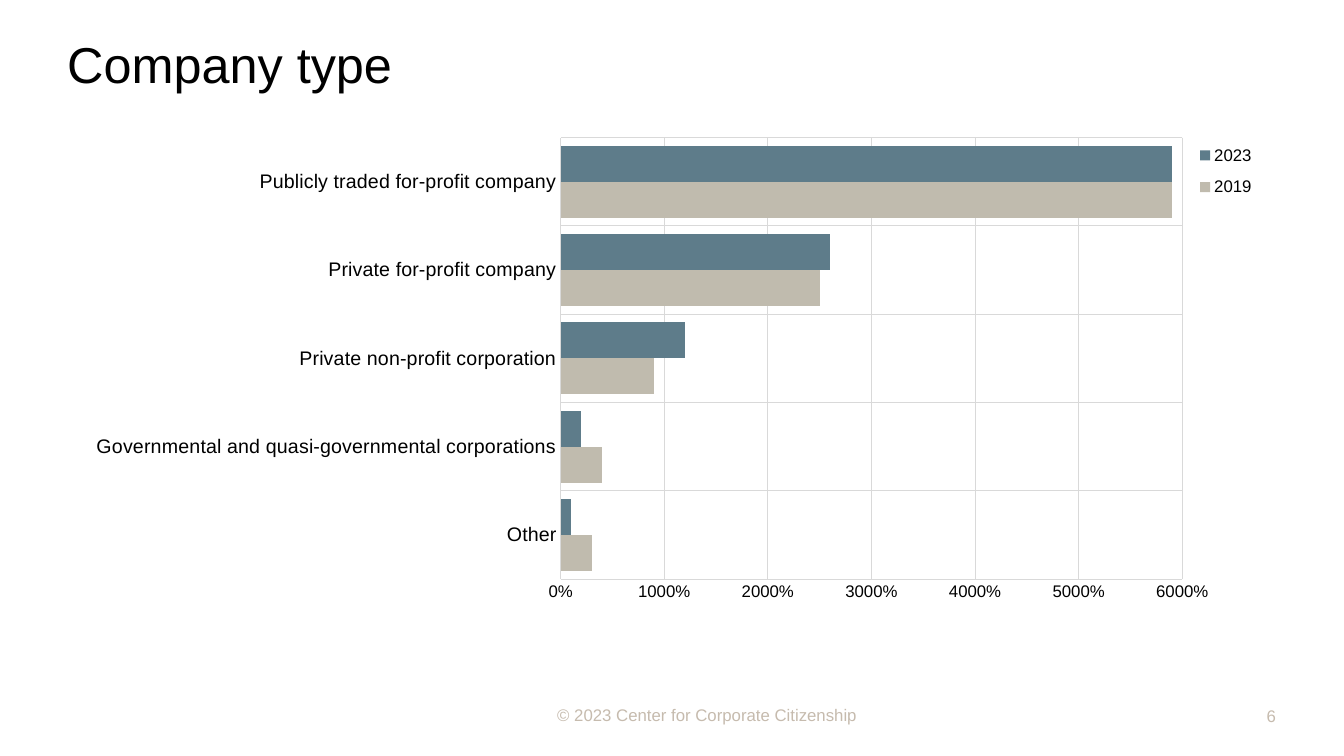
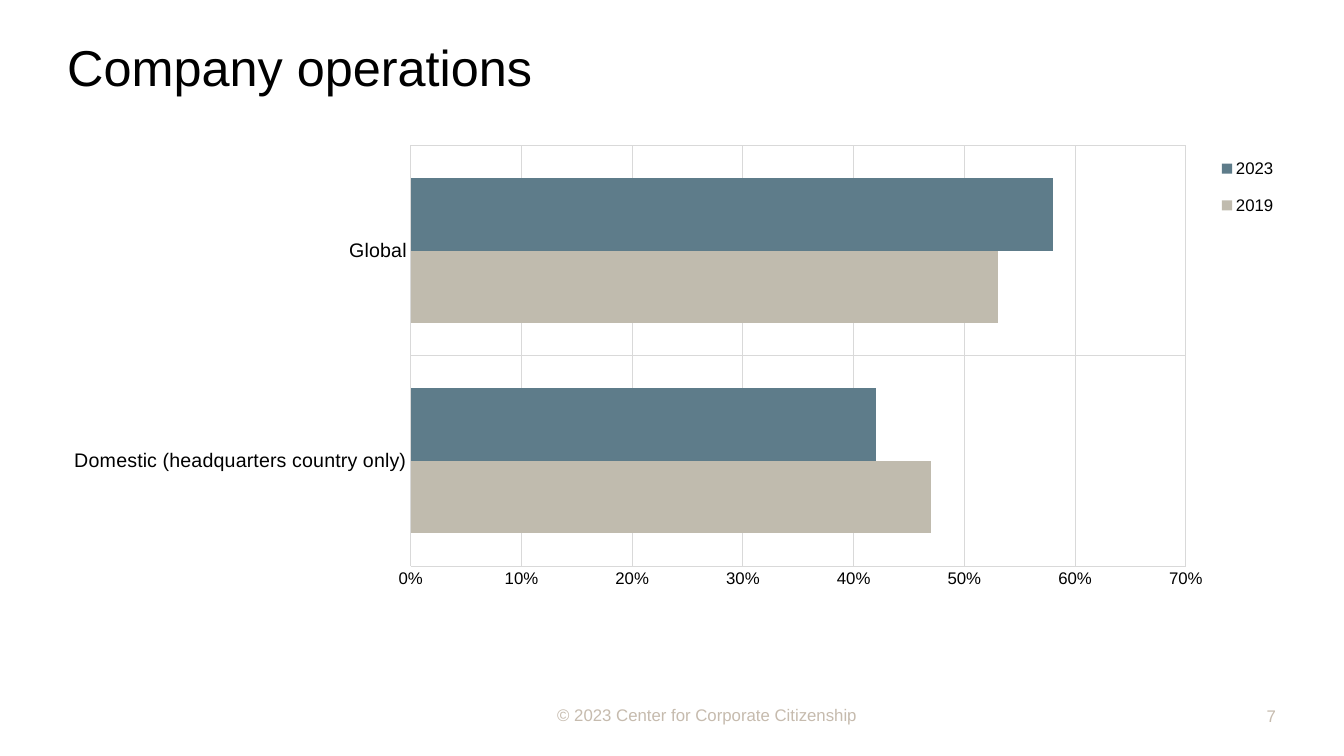
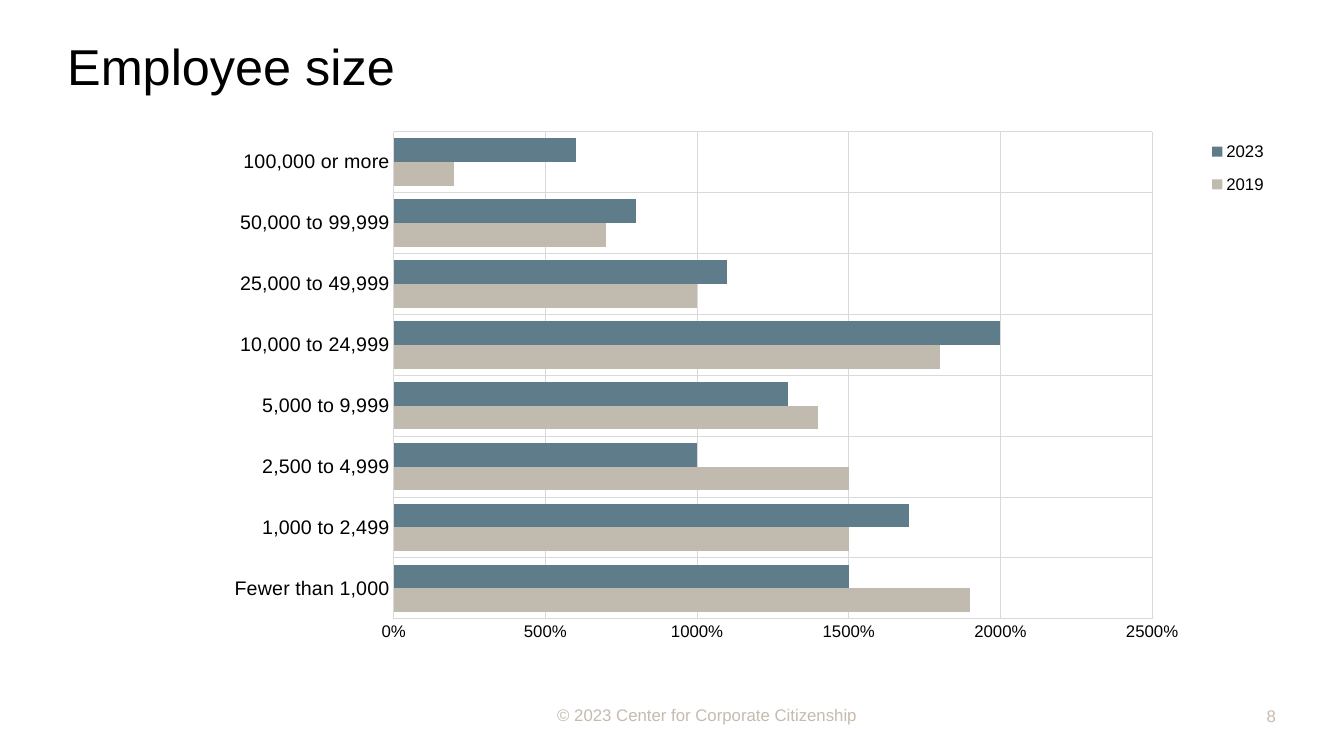
from lxml.etree import SubElement
from pptx import Presentation
from pptx.chart.data import CategoryChartData
from pptx.dml.color import RGBColor
from pptx.enum.chart import XL_CHART_TYPE, XL_LEGEND_POSITION, XL_TICK_MARK
from pptx.enum.text import MSO_ANCHOR, MSO_AUTO_SIZE, PP_ALIGN
from pptx.oxml import parse_xml
from pptx.oxml.ns import nsdecls, qn
from pptx.util import Pt

COLORS = {
    "background": "FFFFFF",
    "text": "000000",
    "footer": "C6BBAE",
    "grid": "D9D9D9",
    "2019": "C0BBAE",
    "2023": "5E7C8A",
}
FONT = "Arial"
MARGIN = 48
FOOTER = "© 2023 Center for Corporate Citizenship"
FRAME_FORMAT = {
    "margin_left": 0, "margin_top": 0, "margin_right": 0, "margin_bottom": 0,
    "word_wrap": True, "auto_size": MSO_AUTO_SIZE.NONE,
    "vertical_anchor": MSO_ANCHOR.MIDDLE,
}

# Areas are (left, top, width, height); plot and legend are fractions of the chart.
PAGES = [
    {
        "title": "Company type", "number": 6,
        "title_area": (MARGIN, 11.5, 912, 68),
        "chart_area": (MARGIN, 77, 864, 388),
        "plot": (0.408, 0.055, 0.514, 0.813),
        "legend": (0.932, 0.046, 0.052, 0.142),
        "gap": 45, "maximum": 60, "step": 10,
        "rows": [
            ("Other", 3, 1),
            ("Governmental and quasi-governmental corporations", 4, 2),
            ("Private non-profit corporation", 9, 12),
            ("Private for-profit company", 25, 26),
            ("Publicly traded for-profit company", 59, 59),
        ],
    },
    {
        "title": "Company operations", "number": 7,
        "title_area": (MARGIN, 13.5, 912, 68),
        "chart_area": (MARGIN, 87, 883, 366.5),
        "plot": (0.278, 0.046, 0.627, 0.82),
        "legend": (0.929, 0.037, 0.052, 0.18),
        "gap": 90, "maximum": 0.7, "step": 0.1,
        "rows": [
            ("Domestic (headquarters country only)", 0.47, 0.42),
            ("Global", 0.53, 0.58),
        ],
    },
    {
        "title": "Employee size", "number": 8,
        "title_area": (MARGIN, 13.5, 900, 67),
        "chart_area": (MARGIN, 87, 864, 395),
        "plot": (0.27, 0.018, 0.627, 0.881),
        "legend": (0.942, 0.011, 0.052, 0.145),
        "gap": 57, "maximum": 25, "step": 5,
        "rows": [
            ("Fewer than 1,000", 19, 15),
            ("1,000 to 2,499", 15, 17),
            ("2,500 to 4,999", 15, 10),
            ("5,000 to 9,999", 14, 13),
            ("10,000 to 24,999", 18, 20),
            ("25,000 to 49,999", 10, 11),
            ("50,000 to 99,999", 7, 8),
            ("100,000 or more", 2, 6),
        ],
    },
]


def rgb(name):
    return RGBColor.from_string(COLORS[name])


def points(area):
    return [Pt(length) for length in area]


def style_font(font, size, color="text"):
    for name, value in {"name": FONT, "size": Pt(size), "bold": False}.items():
        setattr(font, name, value)
    font.color.rgb = rgb(color)


def fill_box(box, text, size, color="text", align=PP_ALIGN.LEFT):
    frame = box.text_frame
    for name, value in FRAME_FORMAT.items():
        setattr(frame, name, value)
    paragraph = frame.paragraphs[0]
    paragraph.alignment = align
    span = paragraph.add_run()
    span.text = text
    style_font(span.font, size, color)


def add_title(page, text, area):
    title = page.shapes.title
    title.left, title.top, title.width, title.height = points(area)
    fill_box(title, text, 36)


def add_footer(page, number):
    note = page.shapes.add_textbox(*points((398, 496, 220, 29)))
    fill_box(note, FOOTER, 12, "footer")
    number_box = page.shapes.add_textbox(*points((884, 496, 27.5, 31)))
    fill_box(number_box, str(number), 12, "footer", PP_ALIGN.RIGHT)


def set_layout(parent, index, area, inner=False):
    """Place a chart part by fractions of the chart; index is its place in the schema."""
    for old in parent.findall(qn("c:layout")):
        parent.remove(old)
    layout = parse_xml(f"<c:layout {nsdecls('c')}><c:manualLayout/></c:layout>")
    settings = [("layoutTarget", "inner")] if inner else []
    settings += [("xMode", "edge"), ("yMode", "edge"), *zip("xywh", area)]
    for name, value in settings:
        SubElement(layout[0], qn(f"c:{name}")).set("val", str(value))
    parent.insert(index, layout)


def style_axis(axis, size):
    axis.has_major_gridlines = True
    axis.major_tick_mark = axis.minor_tick_mark = XL_TICK_MARK.NONE
    style_font(axis.tick_labels.font, size)
    for line in (axis.format.line, axis.major_gridlines.format.line):
        line.color.rgb = rgb("grid")
        line.width = Pt(0.75)


def add_bar_chart(page, content):
    categories, *series_values = zip(*content["rows"])
    data = CategoryChartData(number_format="0%")
    data.categories = categories
    for year, values in zip(("2019", "2023"), series_values):
        data.add_series(year, values)
    chart = page.shapes.add_chart(
        XL_CHART_TYPE.BAR_CLUSTERED, *points(content["chart_area"]), data).chart
    chart.has_title = False
    style_font(chart.font, 10)

    plot = chart.plots[0]
    plot.gap_width = content["gap"]
    plot.overlap = 0
    plot.vary_by_categories = False
    for series in plot.series:
        series.format.fill.solid()
        series.format.fill.fore_color.rgb = rgb(series.name)

    style_axis(chart.category_axis, 14)
    style_axis(chart.value_axis, 12)
    scale = {"minimum_scale": 0, "maximum_scale": content["maximum"],
             "major_unit": content["step"]}
    for name, value in scale.items():
        setattr(chart.value_axis, name, value)
    chart.value_axis.tick_labels.number_format = "0%"
    chart.value_axis.tick_labels.number_format_is_linked = False

    chart.has_legend = True
    chart.legend.position = XL_LEGEND_POSITION.RIGHT
    chart.legend.include_in_layout = False
    style_font(chart.legend.font, 12)

    root = chart.element.find(qn("c:chart"))
    set_layout(root.find(qn("c:plotArea")), 0, content["plot"], inner=True)
    set_layout(root.find(qn("c:legend")), 1, content["legend"])


def main():
    deck = Presentation()
    deck.slide_width, deck.slide_height = Pt(960), Pt(540)
    background = deck.slide_master.background.fill
    background.solid()
    background.fore_color.rgb = rgb("background")
    title_only = deck.slide_layouts[5]
    for content in PAGES:
        page = deck.slides.add_slide(title_only)
        add_title(page, content["title"], content["title_area"])
        add_bar_chart(page, content)
        add_footer(page, content["number"])
    deck.save("out.pptx")


if __name__ == "__main__":
    main()
